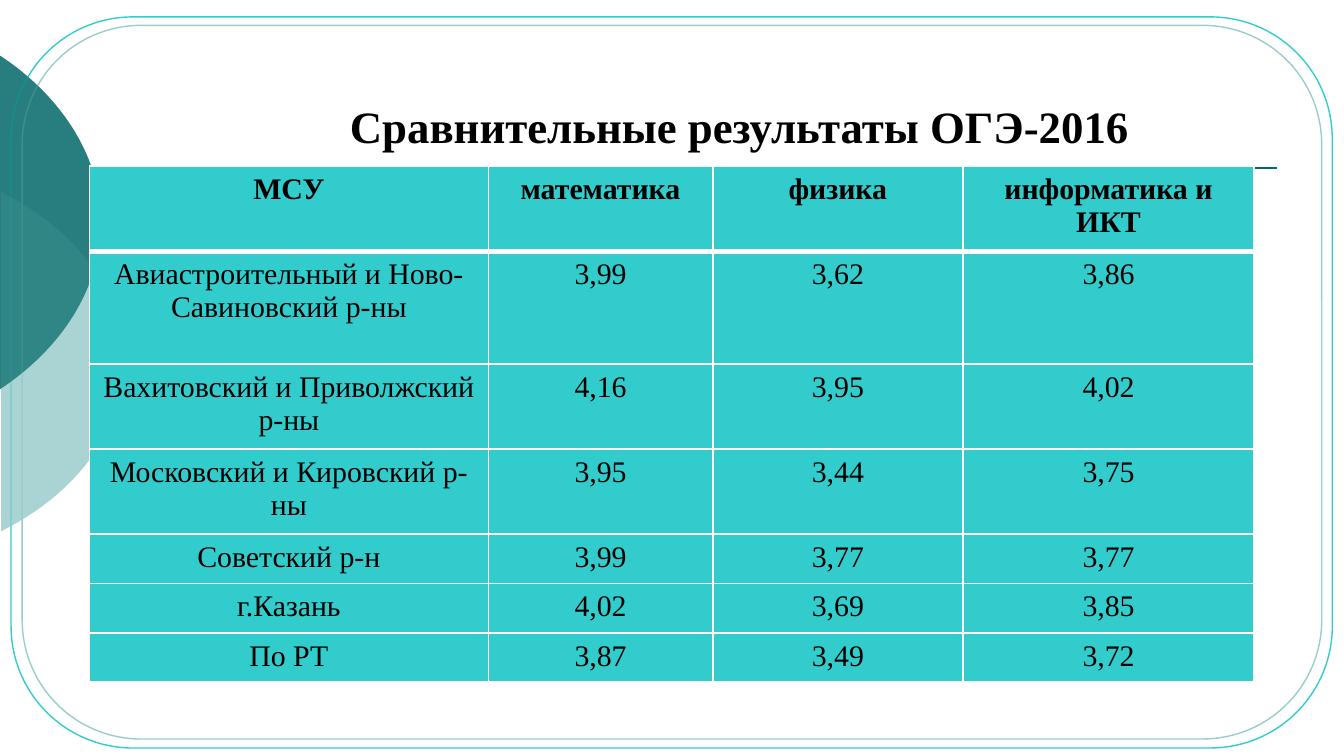
from lxml import etree
from pptx import Presentation
from pptx.dml.color import RGBColor
from pptx.enum.shapes import MSO_CONNECTOR, MSO_SHAPE
from pptx.enum.text import MSO_ANCHOR, PP_ALIGN
from pptx.oxml.ns import qn
from pptx.util import Cm, Pt

LINE = MSO_CONNECTOR.STRAIGHT
ROUND_RECT = MSO_SHAPE.ROUNDED_RECTANGLE
BOTTOM = MSO_ANCHOR.BOTTOM
CENTER = PP_ALIGN.CENTER

FONT = "Times New Roman"
COLORS = {"text": "000000", "cell": "33CCCC", "border": "FFFFFF",
          "pale": "99CCCC", "deep": "006666"}
BLANK_LAYOUT = 6


class SlidePainter:
    def __init__(self, slide):
        self.slide = slide
        self.shapes = slide.shapes

    def color(self, name):
        return RGBColor.from_string(COLORS[name])

    def format_text(self, frame, size, bold=False):
        for paragraph in frame.paragraphs:
            paragraph.alignment = CENTER
            for run in paragraph.runs:
                run.font.name = FONT
                run.font.size = Pt(size)
                run.font.bold = bold
                run.font.color.rgb = self.color("text")
            # The paragraph end would otherwise make the last line taller
            etree.SubElement(paragraph._p, qn("a:endParaRPr"), sz=str(size * 100))

    def segment(self, color, opacity, frame, chord, bend, rise):
        """Disc segment cut by the slide edge; its two halves mirror each other."""
        left, top, width, height = frame
        builder = self.shapes.build_freeform(0, 0, scale=Cm(0.01))
        builder.add_line_segments([(100 * width, 0), (100 * width, 100 * height)])
        disc = builder.convert_to_shape(Cm(left), Cm(top))
        disc.shadow.inherit = False
        disc.line.fill.background()
        disc.fill.solid()
        disc.fill.fore_color.rgb = self.color(color)
        tint = disc.fill._xPr.find(qn("a:solidFill"))[0]
        etree.SubElement(tint, qn("a:alpha"), val=str(opacity * 1000))

        # Replace the straight edges by two curves
        cut, start, end = chord
        right, middle = left + width, (start + end) / 2
        upper = [(cut, start), bend, (right, rise), (right, middle)]
        lower = [(x, start + end - y) for x, y in reversed(upper[:-1])]
        outline = disc._element.spPr.find(f".//{qn('a:path')}")
        for edge in list(outline):
            outline.remove(edge)
        for tag, points in (("moveTo", upper[:1]), ("cubicBezTo", upper[1:]),
                            ("cubicBezTo", lower), ("close", [])):
            step = etree.SubElement(outline, qn(f"a:{tag}"))
            for x, y in points:
                etree.SubElement(step, qn("a:pt"), x=str(round(100 * (x - left))),
                                 y=str(round(100 * (y - top))))

    def frame(self, color, left, top, width, height):
        outline = self.shapes.add_shape(ROUND_RECT, Cm(left), Cm(top), Cm(width), Cm(height))
        outline.shadow.inherit = False
        outline.fill.background()
        outline.line.color.rgb = self.color(color)
        outline.line.width = Pt(0.75)

    def rule(self, color, left, right, y):
        line = self.shapes.add_connector(LINE, Cm(left), Cm(y), Cm(right), Cm(y))
        line.line.color.rgb = self.color(color)
        line.line.width = Pt(1)
        etree.SubElement(line._element.spPr, qn("a:effectLst"))

    def title(self, text, left, top, width, height):
        box = self.shapes.add_textbox(Cm(left), Cm(top), Cm(width), Cm(height))
        box.text_frame.word_wrap = True
        box.text_frame.vertical_anchor = BOTTOM
        box.text_frame.text = text
        self.format_text(box.text_frame, 24, bold=True)

    def cell_border(self, cell, side, width):
        properties = cell._tc.get_or_add_tcPr()
        edge = etree.SubElement(properties, qn(f"a:ln{side}"), w=str(Pt(width)))
        fill = etree.SubElement(edge, qn("a:solidFill"))
        etree.SubElement(fill, qn("a:srgbClr"), val=COLORS["border"])

    def table(self, rows, left, top, widths, heights):
        table = self.shapes.add_table(len(rows), len(widths), Cm(left), Cm(top),
                                      Cm(sum(widths)), Cm(sum(heights))).table
        for column, width in zip(table.columns, widths):
            column.width = Cm(width)
        for r, (values, height) in enumerate(zip(rows, heights)):
            table.rows[r].height = Cm(height)
            # A thick line parts the header from the body
            edges = {"L": 1, "R": 1, "T": 3 if r == 1 else 1, "B": 3 if r == 0 else 1}
            for c, value in enumerate(values):
                cell = table.cell(r, c)
                for side, width in edges.items():
                    self.cell_border(cell, side, width)
                cell.fill.solid()
                cell.fill.fore_color.rgb = self.color("cell")
                cell.text_frame.text = value
                self.format_text(cell.text_frame, 16, bold=r == 0)


RESULTS = [
    ("МСУ", "математика", "физика", "информатика и ИКТ"),
    ("Авиастроительный и Ново-Савиновский р-ны", "3,99", "3,62", "3,86"),
    ("Вахитовский и Приволжский р-ны", "4,16", "3,95", "4,02"),
    ("Московский и Кировский р-ны", "3,95", "3,44", "3,75"),
    ("Советский р-н", "3,99", "3,77", "3,77"),
    ("г.Казань", "4,02", "3,69", "3,85"),
    ("По РТ", "3,87", "3,49", "3,72"),
]


def draw_discs(painter):
    painter.segment("pale", 58, (-7.82, 3.02, 10.16, 7.62),
                    (0.02, 3.63, 10.04), (1.45, 4.34), 5.54)
    painter.segment("deep", 60, (-9.32, 0, 11.23, 8.41),
                    (-0.02, 1.04, 7.37), (1.19, 1.83), 3)


def main():
    deck = Presentation()
    deck.slide_width, deck.slide_height = Cm(25.4), Cm(14.29)
    painter = SlidePainter(deck.slides.add_slide(deck.slide_layouts[BLANK_LAYOUT]))

    # Background: translucent discs lie both under and over the frames
    draw_discs(painter)
    painter.frame("cell", 0.21, 0.32, 24.97, 13.82)
    painter.frame("pale", 0.42, 0.48, 24.56, 13.49)
    painter.rule("deep", 3.81, 24.13, 3.18)
    draw_discs(painter)

    # Heading and exam results
    painter.title("Сравнительные результаты ОГЭ-2016", 3.81, 0.64, 20.32, 2.37)
    painter.table(RESULTS, 1.69, 3.14, [7.54, 4.24, 4.73, 5.5],
                  [1.5, 2.13, 1.5, 1.5] + [0.87] * 3)

    deck.save("out.pptx")


if __name__ == "__main__":
    main()
